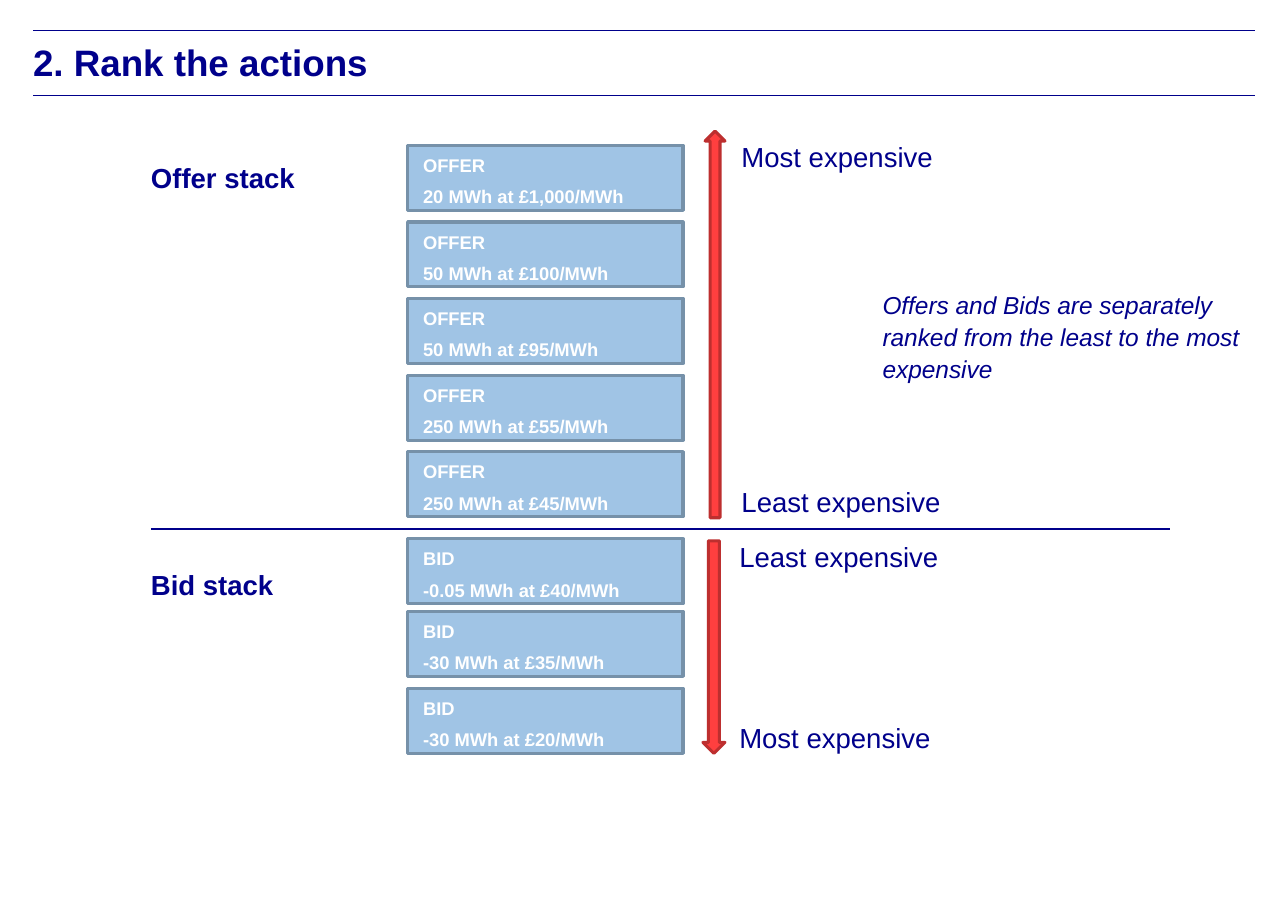
from pptx import Presentation
from pptx import util as u
from pptx.dml.color import RGBColor
from pptx.enum import shapes, text
from pptx.oxml import ns
from lxml import etree

HUES = {"navy": "00008B", "card": "A0C4E5", "edge": "7691A9",
        "red": "FF3F3F", "rim": "BD2F2F", "white": "FFFFFF"}
HUES = {name: RGBColor.from_string(code) for name, code in HUES.items()}

deck = Presentation()
deck.slide_width, deck.slide_height = u.Inches(11.69), u.Inches(8.27)
slide = deck.slides.add_slide(deck.slide_layouts[5])


def write(shape, lines, size, hue="navy", pad=(0, 0), pitch=None, **font):
    frame = shape.text_frame
    look = {"word_wrap": True, "vertical_anchor": text.MSO_ANCHOR.TOP,
            "auto_size": text.MSO_AUTO_SIZE.NONE,
            "margin_left": u.Inches(pad[0]), "margin_top": u.Inches(pad[1]),
            "margin_right": 0, "margin_bottom": 0}
    for key, value in look.items():
        setattr(frame, key, value)
    frame.text = "\n".join(lines)
    for para in frame.paragraphs:
        para.alignment = text.PP_ALIGN.LEFT
        para.space_before = u.Pt(0)
        para.space_after = u.Pt(6)
        para.line_spacing = pitch
        para.font.color.rgb = HUES[hue]
        style = {"name": "Arial", "size": u.Pt(size), "bold": False, **font}
        for key, value in style.items():
            setattr(para.font, key, value)


def block(kind, x, y, w, h, fill, line):
    shape = slide.shapes.add_shape(kind, *map(u.Inches, (x, y, w, h)))
    shape.shadow.inherit = False
    shape.fill.solid()
    shape.fill.fore_color.rgb = HUES[fill]
    shape.line.color.rgb = HUES[line]
    shape.line.width = u.Pt(2)
    return shape


title = slide.shapes.title
place = {"left": 0.3, "top": 0.36, "width": 11.08, "height": 0.5}
for key, value in place.items():
    setattr(title, key, u.Inches(value))
write(title, ["2. Rank the actions"], 24, bold=True)

rules = [(0.3, 0.28, 11.39, 0.5), (0.3, 0.87, 11.39, 0.5), (1.37, 4.8, 10.62, 1)]
for start, y, end, weight in rules:
    rule = slide.shapes.add_connector(
        shapes.MSO_CONNECTOR.STRAIGHT, *map(u.Inches, (start, y, end, y)))
    rule.line.color.rgb = HUES["navy"]
    rule.line.width = u.Pt(weight)
    etree.SubElement(rule._element.spPr, ns.qn("a:effectLst"))

offers = ["20 MWh at £1,000/MWh", "50 MWh at £100/MWh", "50 MWh at £95/MWh",
          "250 MWh at £55/MWh", "250 MWh at £45/MWh"]
bids = ["-0.05 MWh at £40/MWh", "-30 MWh at £35/MWh", "-30 MWh at £20/MWh"]
cards = [("OFFER", offer, 1.32 + 0.695 * i) for i, offer in enumerate(offers)]
cards += [("BID", bid, y) for bid, y in zip(bids, (4.89, 5.55, 6.25))]
for kind, price, y in cards:
    card = block(shapes.MSO_SHAPE.RECTANGLE, 3.7, y, 2.5, 0.59, "card", "edge")
    write(card, [kind, price], 12, "white", (0.14, 0.08), bold=True)

block(shapes.MSO_SHAPE.UP_ARROW, 6.4, 1.19, 0.18, 3.51, "red", "rim")
block(shapes.MSO_SHAPE.DOWN_ARROW, 6.38, 4.91, 0.2, 1.93, "red", "rim")

note = "Offers and Bids are separately ranked from the least to the most expensive"
labels = [
    ("Offer stack", 1.37, 1.47, 1.62, 0.29, 18, {"bold": True}),
    ("Bid stack", 1.37, 5.16, 1.62, 0.29, 18, {"bold": True}),
    ("Most expensive", 6.73, 1.28, 3.25, 0.29, 18, {}),
    ("Least expensive", 6.73, 4.41, 3.25, 0.29, 18, {}),
    ("Least expensive", 6.71, 4.91, 3.25, 0.29, 18, {}),
    ("Most expensive", 6.71, 6.55, 3.25, 0.29, 18, {}),
    (note, 8.01, 2.61, 3.25, 0.88, 16, {"italic": True}),
]
for words, x, y, w, h, size, font in labels:
    label = slide.shapes.add_textbox(*map(u.Inches, (x, y, w, h)))
    write(label, [words], size, pitch=u.Pt(21), **font)

deck.save("out.pptx")
